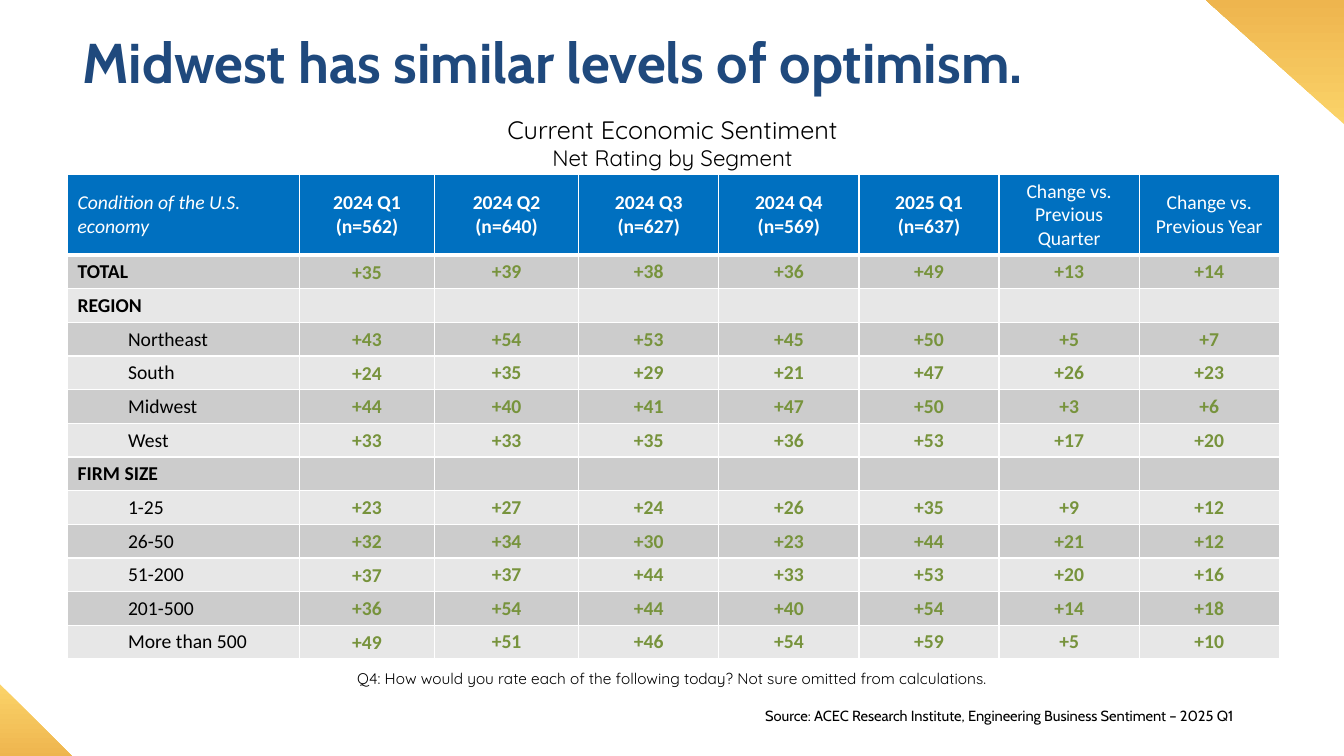
"""Build the slide on current economic sentiment by region and firm size."""
from lxml.etree import SubElement
from pptx import Presentation
from pptx.dml.color import RGBColor
from pptx.enum.text import MSO_ANCHOR as Anchor, MSO_AUTO_SIZE as AutoSize, PP_ALIGN as Align
from pptx.oxml.ns import qn
from pptx.util import Inches, Pt

NAVY = RGBColor(0x1F, 0x49, 0x7D)
BLUE = RGBColor(0x00, 0x70, 0xC0)
GREEN = RGBColor(0x77, 0x93, 0x3C)
BLACK = RGBColor(0x00, 0x00, 0x00)
WHITE = RGBColor(0xFF, 0xFF, 0xFF)
DARK_GREY = RGBColor(0xCC, 0xCC, 0xCC)
LIGHT_GREY = RGBColor(0xE7, 0xE7, 0xE7)
PALE_GOLD = RGBColor(0xFB, 0xD3, 0x69)
DEEP_GOLD = RGBColor(0xEE, 0xB5, 0x4E)

HEADERS = [
    "Condition of the U.S. economy",
    "2024 Q1\n(n=562)", "2024 Q2\n(n=640)", "2024 Q3\n(n=627)",
    "2024 Q4\n(n=569)", "2025 Q1\n(n=637)",
    "Change vs. Previous Quarter", "Change vs. Previous Year",
]
RATINGS = [
    ("TOTAL", 35, 39, 38, 36, 49, 13, 14),
    ("REGION",),
    ("Northeast", 43, 54, 53, 45, 50, 5, 7),
    ("South", 24, 35, 29, 21, 47, 26, 23),
    ("Midwest", 44, 40, 41, 47, 50, 3, 6),
    ("West", 33, 33, 35, 36, 53, 17, 20),
    ("FIRM SIZE",),
    ("1-25", 23, 27, 24, 26, 35, 9, 12),
    ("26-50", 32, 34, 30, 23, 44, 21, 12),
    ("51-200", 37, 37, 44, 33, 53, 20, 16),
    ("201-500", 36, 54, 44, 40, 54, 14, 18),
    ("More than 500", 49, 51, 46, 54, 59, 5, 10),
]
COLUMN_WIDTHS = [2.3, 1.34, 1.43] + [1.39] * 5


def style(para, name, size, color, bold=False, italic=False, align=Align.LEFT):
    para.alignment = align
    for span in para.runs:
        font = span.font
        font.name, font.size, font.bold, font.italic = name, Pt(size), bold, italic
        font.color.rgb = color


def add_border(cell, side, points):
    line = SubElement(cell._tc.get_or_add_tcPr(), qn(f"a:ln{side}"), w=str(Pt(points)))
    fill = SubElement(line, qn("a:solidFill"))
    SubElement(fill, qn("a:srgbClr"), val=str(WHITE))


deck = Presentation()
deck.slide_width, deck.slide_height = Inches(13.33), Inches(7.5)
page = deck.slides.add_slide(deck.slide_layouts[5])

for left, top, width, height, rotation in [
    (11.96, 0, 1.38, 1.24, 180),
    (0, 6.79, 0.73, 0.73, 0),
]:
    outline = page.shapes.build_freeform(Inches(left), Inches(top))
    outline.add_line_segments([
        (Inches(left), Inches(top + height)),
        (Inches(left + width), Inches(top + height)),
    ])
    corner = outline.convert_to_shape()
    corner.rotation = rotation
    corner.shadow.inherit = False
    corner.line.fill.background()
    corner.fill.gradient()
    corner.fill.gradient_angle = 270
    for stop, color, position in zip(corner.fill.gradient_stops, (PALE_GOLD, DEEP_GOLD), (0, 1)):
        stop.color.rgb = color
        stop.position = position

title = page.shapes.title
title.left, title.top = Inches(0.67), Inches(0.3)
title.width, title.height = Inches(12.17), Inches(0.91)
frame = title.text_frame
frame.text = "Midwest has similar levels of optimism."
frame.auto_size = AutoSize.NONE
frame.vertical_anchor = Anchor.TOP
heading = frame.paragraphs[0]
heading.line_spacing = 0.9
style(heading, "Cabin", 40, NAVY, bold=True)
heading._p.get_or_add_pPr().set("marL", str(Inches(0.05)))

for left, top, width, height, text, name, sizes, align, anchor in [
    (3.92, 1.08, 5.5, 0.67, "Current Economic Sentiment\nNet Rating by Segment",
     "Quicksand", (18, 16), Align.CENTER, Anchor.MIDDLE),
    (3.04, 6.59, 7.25, 0.29,
     "Q4: How would you rate each of the following today? Not sure omitted from calculations.",
     "Quicksand", (11,), Align.CENTER, Anchor.TOP),
    (7.49, 6.96, 5.7, 0.28,
     "Source: ACEC Research Institute, Engineering Business Sentiment – 2025 Q1",
     "Cabin", (10.5,), Align.LEFT, Anchor.TOP),
]:
    box = page.shapes.add_textbox(Inches(left), Inches(top), Inches(width), Inches(height))
    frame = box.text_frame
    frame.word_wrap = True
    frame.vertical_anchor = anchor
    frame.text = text
    for para, size in zip(frame.paragraphs, sizes):
        style(para, name, size, BLACK, align=align)

table = page.shapes.add_table(
    len(RATINGS) + 1, len(HEADERS), Inches(0.67), Inches(1.73), Inches(12), Inches(4.61)
).table
for column, width in zip(table.columns, COLUMN_WIDTHS):
    column.width = Inches(width)
for index, row in enumerate(table.rows):
    row.height = Inches(0.32 if index else 0.77)

for index, cell in enumerate(table.iter_cells()):
    row, column = divmod(index, len(HEADERS))
    cell.vertical_anchor = Anchor.MIDDLE
    for side in "LRTB":
        add_border(cell, side, 3 if row == 0 and side == "B" else 1)
    cell.fill.solid()
    align = Align.CENTER if column else Align.LEFT
    if row == 0:
        cell.fill.fore_color.rgb = BLUE
        cell.text_frame.text = HEADERS[column]
        for para in cell.text_frame.paragraphs:
            style(para, "Calibri", 14, WHITE, 1 <= column <= 5, column == 0, align)
        continue
    cell.fill.fore_color.rgb = DARK_GREY if row % 2 else LIGHT_GREY
    values = RATINGS[row - 1]
    para = cell.text_frame.paragraphs[0]
    if column >= len(values):
        SubElement(para._p, qn("a:endParaRPr"), sz="1400")
    elif column:
        para.text = f"+{values[column]}"
        style(para, "Calibri", 14, GREEN, bold=True, align=align)
        if column == 1:
            cell.margin_left = cell.margin_right = cell.margin_top = Inches(0.01)
            cell.margin_bottom = 0
    else:
        para.text = values[0]
        is_heading = values[0].isupper()
        style(para, "Calibri", 14, BLACK, bold=is_heading)
        if not is_heading:
            para.level = 1
            para._p.get_or_add_pPr().set("marL", str(Inches(0.5)))

deck.save("out.pptx")
